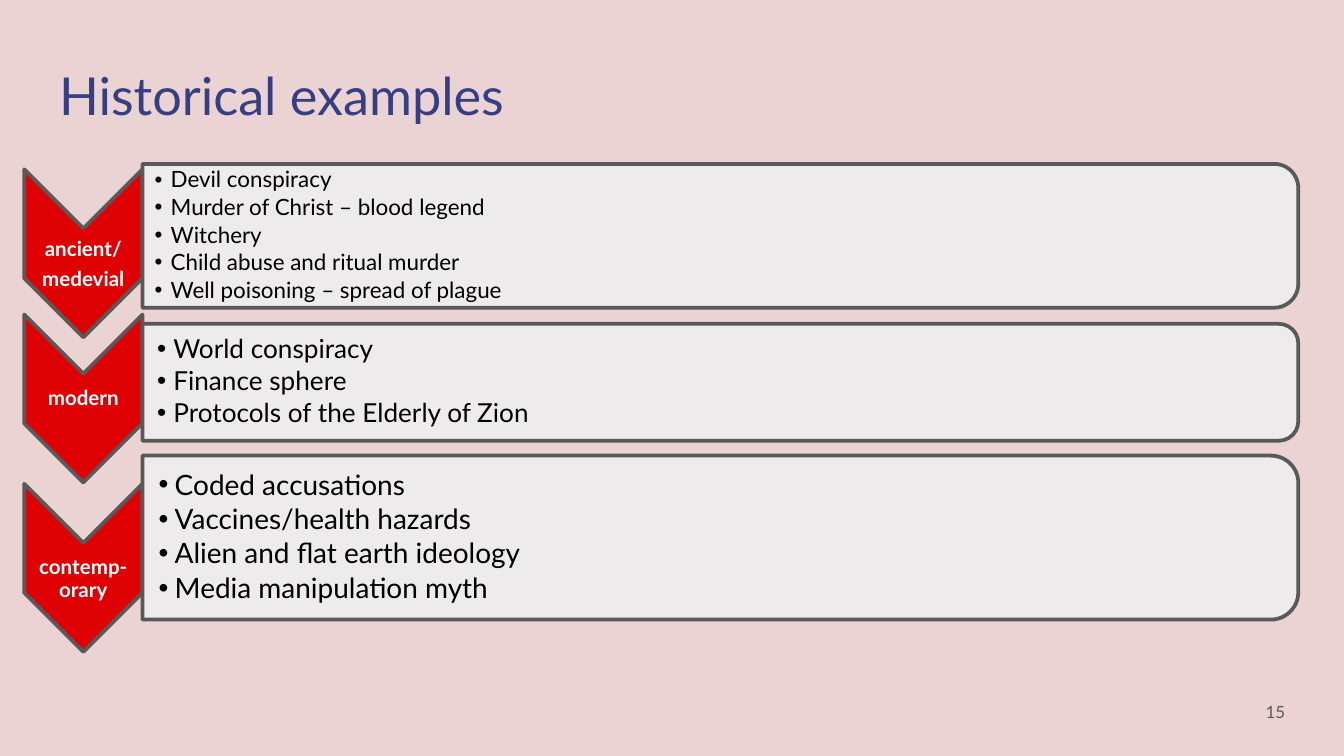
from lxml import etree
from pptx import Presentation
from pptx.dml.color import RGBColor
from pptx.enum.shapes import MSO_SHAPE
from pptx.enum.text import MSO_ANCHOR, MSO_AUTO_SIZE, PP_ALIGN
from pptx.oxml.ns import qn
from pptx.util import Inches, Pt

CHEVRON = MSO_SHAPE.CHEVRON
PANEL = MSO_SHAPE.ROUND_2_SAME_RECTANGLE
TOP, MIDDLE = MSO_ANCHOR.TOP, MSO_ANCHOR.MIDDLE
LEFT, CENTER, RIGHT = PP_ALIGN.LEFT, PP_ALIGN.CENTER, PP_ALIGN.RIGHT
NO_FIT = MSO_AUTO_SIZE.NONE

PINK = RGBColor(0xEB, 0xD3, 0xD3)
NAVY = RGBColor(0x36, 0x3F, 0x83)
RED = RGBColor(0xDF, 0x02, 0x05)
GRAY = RGBColor(0x59, 0x59, 0x59)
PALE = RGBColor(0xEE, 0xEE, 0xEE)
WHITE = RGBColor(0xFF, 0xFF, 0xFF)
BLACK = RGBColor(0, 0, 0)

FONT = "Lato"
INDENT = Inches(0.12)

ERAS = [
    (["ancient/", "medevial"], 1.26, 1.78, 1.22, 1.07, 12, 0.09,
     ["Devil conspiracy", "Murder of Christ – blood legend", "Witchery",
      "Child abuse and ritual murder", "Well poisoning – spread of plague"]),
    (["modern"], 2.34, 2.78, 2.41, 0.87, 14, 0.11,
     ["World conspiracy", "Finance sphere", "Protocols of the Elderly of Zion"]),
    (["contemp-orary"], 3.6, 4.12, 3.39, 1.22, 15, 0.12,
     ["Coded accusations", "Vaccines/health hazards",
      "Alien and flat earth ideology", "Media manipulation myth"]),
]


def style(para, size, color, align, bold=False):
    para.alignment = align
    font = para.font
    font.name, font.size, font.bold = FONT, Pt(size), bold
    font.color.rgb = color


def set_frame(frame, pad, anchor, left=None):
    frame.word_wrap = True
    frame.auto_size = NO_FIT
    frame.vertical_anchor = anchor
    frame.margin_left = Inches(pad if left is None else left)
    frame.margin_right = frame.margin_top = frame.margin_bottom = Inches(pad)


def add_text(slide, box, lines, size, color, align, pad, left=None, bold=False):
    frame = slide.shapes.add_textbox(*map(Inches, box)).text_frame
    set_frame(frame, pad, MIDDLE, left)
    frame.text = "\n".join(lines)
    for para in frame.paragraphs:
        if left is not None:
            add_bullet(para)
        style(para, size, color, align, bold)
    return frame.paragraphs


def space(paras, size, share):
    for para in paras:
        para.line_spacing = 0.9
        para.space_after = Pt(round(size * share, 1))


def add_bullet(para):
    props = para._p.get_or_add_pPr()
    props.set("marL", str(INDENT))
    props.set("indent", str(-INDENT))
    etree.SubElement(props, qn("a:buFont"), typeface="Arial")
    etree.SubElement(props, qn("a:buChar"), char="•")


def add_turned(slide, kind, left, top, width, height, color):
    x = left + (width - height) / 2
    y = top + (height - width) / 2
    shape = slide.shapes.add_shape(kind, *map(Inches, (x, y, height, width)))
    shape.rotation = 90
    shape.shadow.inherit = False
    shape.fill.solid()
    shape.fill.fore_color.rgb = color
    shape.line.color.rgb = GRAY
    shape.line.width = Pt(2)
    etree.SubElement(shape.line._ln, qn("a:round"))
    return shape


def add_era(slide, label, tip, mark, top, height, size, pad, items):
    add_turned(slide, CHEVRON, 0.18, tip, 0.88, 1.25, RED)
    paras = add_text(slide, (0.18, mark, 0.88, 0.38), label, 11, WHITE,
                     CENTER, 0.01, bold=True)
    space(paras, 11, 0.35)
    panel = add_turned(slide, PANEL, 1.06, top, 8.6, height, PALE)
    tint = panel.fill._xPr.find(qn("a:solidFill"))[0]
    etree.SubElement(tint, qn("a:alpha"), val="90000")
    box = (1.06, top + 0.05, 8.55, height - 0.1)
    paras = add_text(slide, box, items, size, BLACK, LEFT, 0.01, left=pad)
    space(paras, size, 0.15)


def set_title(slide, text):
    title = slide.shapes.title
    title.left, title.top, title.width, title.height = map(
        Inches, (0.34, 0.37, 7.44, 0.63))
    frame = title.text_frame
    set_frame(frame, 0.1, TOP)
    frame.text = text
    style(frame.paragraphs[0], 28, NAVY, LEFT)


def main():
    deck = Presentation()
    deck.slide_width = Inches(10)
    deck.slide_height = deck.slide_width * 9 // 16
    slide = deck.slides.add_slide(deck.slide_layouts[5])
    slide.background.fill.solid()
    slide.background.fill.fore_color.rgb = PINK
    set_title(slide, "Historical examples")
    for era in ERAS:
        add_era(slide, *era)
    add_text(slide, (9.06, 5.08, 0.6, 0.43), ["15"], 9, GRAY, RIGHT, 0.1)
    deck.save("out.pptx")


if __name__ == "__main__":
    main()
